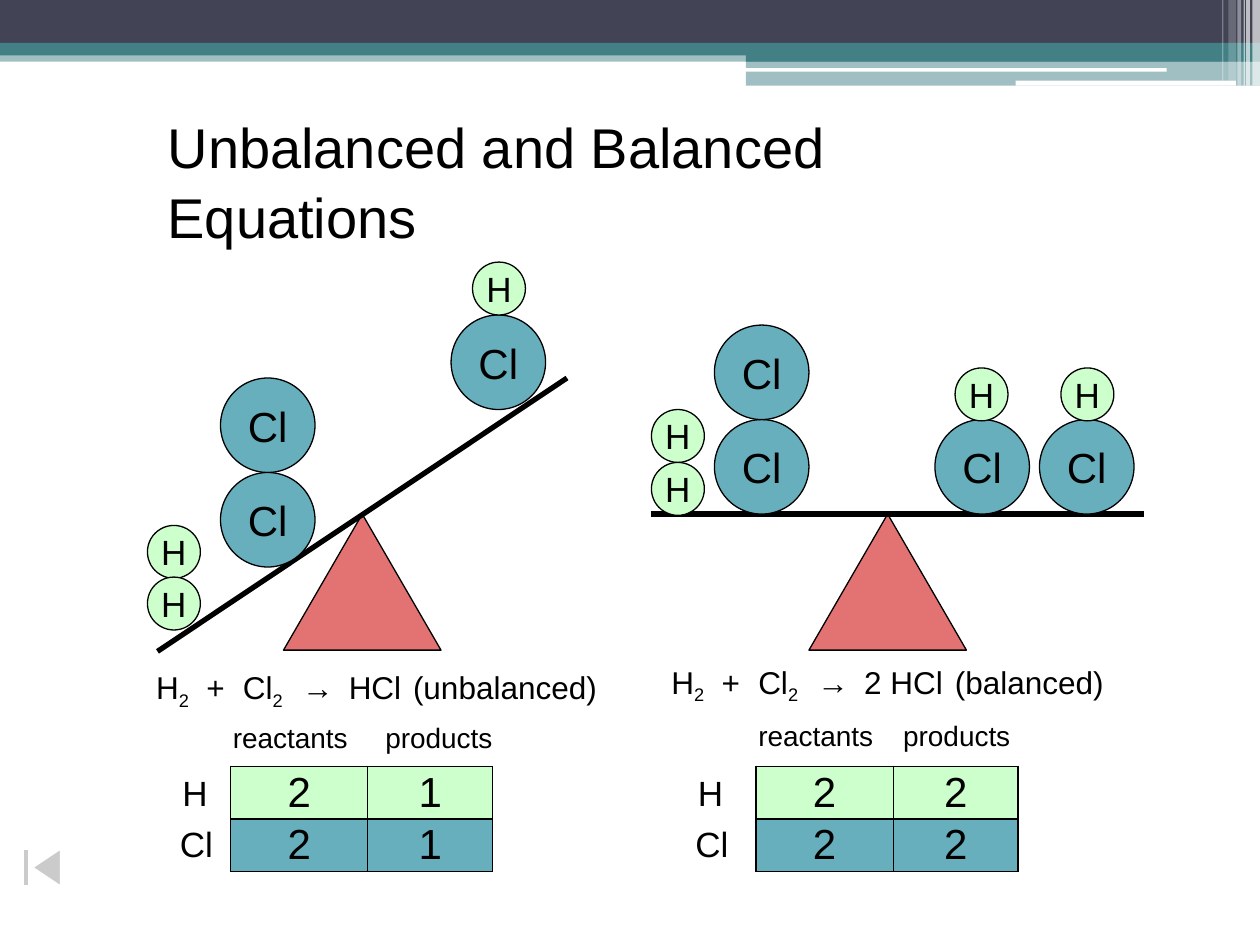
import pptx
import pptx.dml.color
import pptx.enum.shapes
import pptx.enum.text
import pptx.oxml.ns
import pptx.util
from lxml import etree

Inches = pptx.util.Inches
Pt = pptx.util.Pt
qn = pptx.oxml.ns.qn
SHAPE = pptx.enum.shapes.MSO_SHAPE
ALIGN = pptx.enum.text.PP_ALIGN
ANCHOR = pptx.enum.text.MSO_ANCHOR

COLORS = {
    "ink": "000000", "white": "FFFFFF", "navy": "424456", "teal": "438086",
    "red": "CC0000", "blue": "67AFBD", "green": "CCFFCC",
}
ATOMS = {"H": (0.42, "green", 20), "Cl": (0.75, "blue", 24)}
BARS = [
    (0, 0.4, 10, 0.09, "teal", 50),
    (0, 0, 10, 0.34, "navy", 100),
    (0, 0.34, 10, 0.1, "teal", 100),
    (5.92, 0.39, 4.08, 0.1, "teal", 100),
    (5.92, 0.48, 4.08, 0.2, "teal", 50),
    (5.91, 0.54, 3.35, 0.03, "white", 100),
    (8.06, 0.64, 1.75, 0.04, "white", 100),
    (9.94, 0, 0.06, 0.68, "white", 65),
    (9.89, 0, 0.03, 0.68, "white", 65),
    (9.87, 0, 0.01, 0.68, "white", 60),
    (9.82, 0, 0.03, 0.68, "white", 40),
    (9.75, 0, 0.06, 0.64, "white", 20),
    (9.7, 0, 0.01, 0.64, "white", 30),
]
TABS = (0.4, 0.69, 1.16, 1.53)


def rgb(name):
    return pptx.dml.color.RGBColor.from_string(COLORS[name])


def write(frame, runs, size=18, align=ALIGN.LEFT, anchor=ANCHOR.TOP,
          wrap=True, pad=(0.1, 0.05), tabs=(), space=1.0):
    frame.word_wrap = wrap
    frame.auto_size = pptx.enum.text.MSO_AUTO_SIZE.NONE
    frame.vertical_anchor = anchor
    frame.margin_left = frame.margin_right = Inches(pad[0])
    frame.margin_top = frame.margin_bottom = Inches(pad[1])
    para = frame.paragraphs[0]
    para.alignment = align
    para.line_spacing = space
    if tabs:
        stops = etree.SubElement(para._p.get_or_add_pPr(), qn("a:tabLst"))
        for stop in tabs:
            etree.SubElement(stops, qn("a:tab"), pos=str(Inches(stop)), algn="l")
    for words, kind in [(runs, "")] if isinstance(runs, str) else runs:
        run = para.add_run()
        run.text = words
        font = run.font
        font.name, font.size, font.bold = "Arial", Pt(size), kind == "bold"
        font.color.rgb = rgb("ink")
        if kind == "sub":
            font._element.set("baseline", "-25000")


def label(slide, left, top, width, height, runs, **style):
    box = slide.shapes.add_textbox(*map(Inches, (left, top, width, height)))
    write(box.text_frame, runs, **style)


def shape(slide, kind, left, top, width, height, fill, alpha=100, line=None):
    item = slide.shapes.add_shape(kind, *map(Inches, (left, top, width, height)))
    item.shadow.inherit = False
    item.fill.solid()
    item.fill.fore_color.rgb = rgb(fill)
    if alpha < 100:
        color = item.fill._xPr.find(qn("a:solidFill"))[0]
        etree.SubElement(color, qn("a:alpha"), val=str(alpha * 1000))
    if line:
        item.line.color.rgb = rgb(line)
        item.line.width = Pt(0.75)
    else:
        item.line.fill.background()
    return item


def atom(slide, name, left, top):
    side, fill, size = ATOMS[name]
    ball = shape(slide, SHAPE.OVAL, left, top, side, side, fill, line="ink")
    write(ball.text_frame, name, size=size, align=ALIGN.CENTER,
          anchor=ANCHOR.MIDDLE, wrap=False, pad=(0, 0))


def scale(slide, left, start, end, atoms):
    shape(slide, SHAPE.ISOSCELES_TRIANGLE, left, 4.08, 1.25, 1.08, "red", 55, "ink")
    plank = slide.shapes.add_connector(
        pptx.enum.shapes.MSO_CONNECTOR.STRAIGHT, *map(Inches, start + end))
    plank.line.color.rgb = rgb("ink")
    plank.line.width = Pt(3)
    etree.SubElement(plank._element.spPr, qn("a:effectLst"))
    for name, x, y in atoms:
        atom(slide, name, x, y)


def formula(slide, left, top, result, note, gap):
    runs = [("H", ""), ("2", "sub"), ("\t+\tCl", ""), ("2", "sub"),
            ("\t→", "bold"), ("\t" + result, "")]
    label(slide, left, top, 2.6, 0.4, runs, tabs=TABS)
    label(slide, left + gap, top, 1.7, 0.4, note)


def edge(cell):
    props = cell._tc.get_or_add_tcPr()
    for spot, side in enumerate(("lnL", "lnR", "lnT", "lnB")):
        line = etree.Element(qn("a:" + side), w=str(Pt(0.75)))
        fill = etree.SubElement(line, qn("a:solidFill"))
        etree.SubElement(fill, qn("a:srgbClr"), val=COLORS["ink"])
        props.insert(spot, line)


def tally(slide, left, top, counts, heads, shift):
    for x, word in zip(heads, ("reactants", "products")):
        label(slide, x, top, 1.2, 0.37, word, size=16)
    grid = slide.shapes.add_table(
        2, 2, *map(Inches, (left, 6.08, 2.08, 0.84))).table
    grid.first_row = grid.horz_banding = False
    for col, width in zip(grid.columns, (1.09, 0.99)):
        col.width = Inches(width)
    for i, name in enumerate(ATOMS):
        label(slide, left - shift - 0.02 * i, 6.07 + 0.41 * i, 0.5, 0.43,
              name, size=20)
        grid.rows[i].height = Inches(0.42)
        for j, count in enumerate(counts):
            cell = grid.cell(i, j)
            cell.margin_left = cell.margin_right = 0
            cell.margin_top = cell.margin_bottom = 0
            cell.vertical_anchor = ANCHOR.MIDDLE
            cell.fill.solid()
            cell.fill.fore_color.rgb = rgb(ATOMS[name][1])
            edge(cell)
            write(cell.text_frame, count, size=24, align=ALIGN.CENTER,
                  pad=(0, 0))


def main():
    deck = pptx.Presentation()
    deck.slide_width, deck.slide_height = Inches(10), Inches(7.5)
    slide = deck.slides.add_slide(deck.slide_layouts[5])
    for *box, fill, alpha in BARS:
        shape(slide, SHAPE.RECTANGLE, *box, fill, alpha)

    title = slide.shapes.title
    title.left, title.top = Inches(1.23), Inches(0.82)
    title.width, title.height = Inches(7.5), Inches(1.2)
    write(title.text_frame, "Unbalanced and Balanced Equations",
          size=32, space=1.04)

    scale(slide, 2.25, (1.25, 5.17), (4.5, 3), [
        ("Cl", 3.58, 2.5), ("Cl", 1.75, 3), ("Cl", 1.75, 3.75),
        ("H", 1.17, 4.17), ("H", 1.17, 4.58), ("H", 3.75, 2.08)])
    scale(slide, 6.42, (5.17, 4.08), (9.08, 4.08), [
        ("Cl", 8.25, 3.33), ("Cl", 7.42, 3.33), ("Cl", 5.67, 3.33),
        ("Cl", 5.67, 2.58), ("H", 8.42, 2.92), ("H", 7.58, 2.92),
        ("H", 5.17, 3.25), ("H", 5.17, 3.67)])

    formula(slide, 1.14, 5.25, "HCl", "(unbalanced)", 2.04)
    formula(slide, 5.23, 5.21, "2 HCl", "(balanced)", 2.25)
    tally(slide, 1.83, 5.67, "21", (1.75, 2.96), 0.48)
    tally(slide, 6, 5.65, "22", (5.92, 7.07), 0.56)
    shape(slide, SHAPE.ACTION_BUTTON_BEGINNING, 0, 6.69, 0.67, 0.39,
          "white", 50, "white")
    deck.save("out.pptx")


if __name__ == "__main__":
    main()
